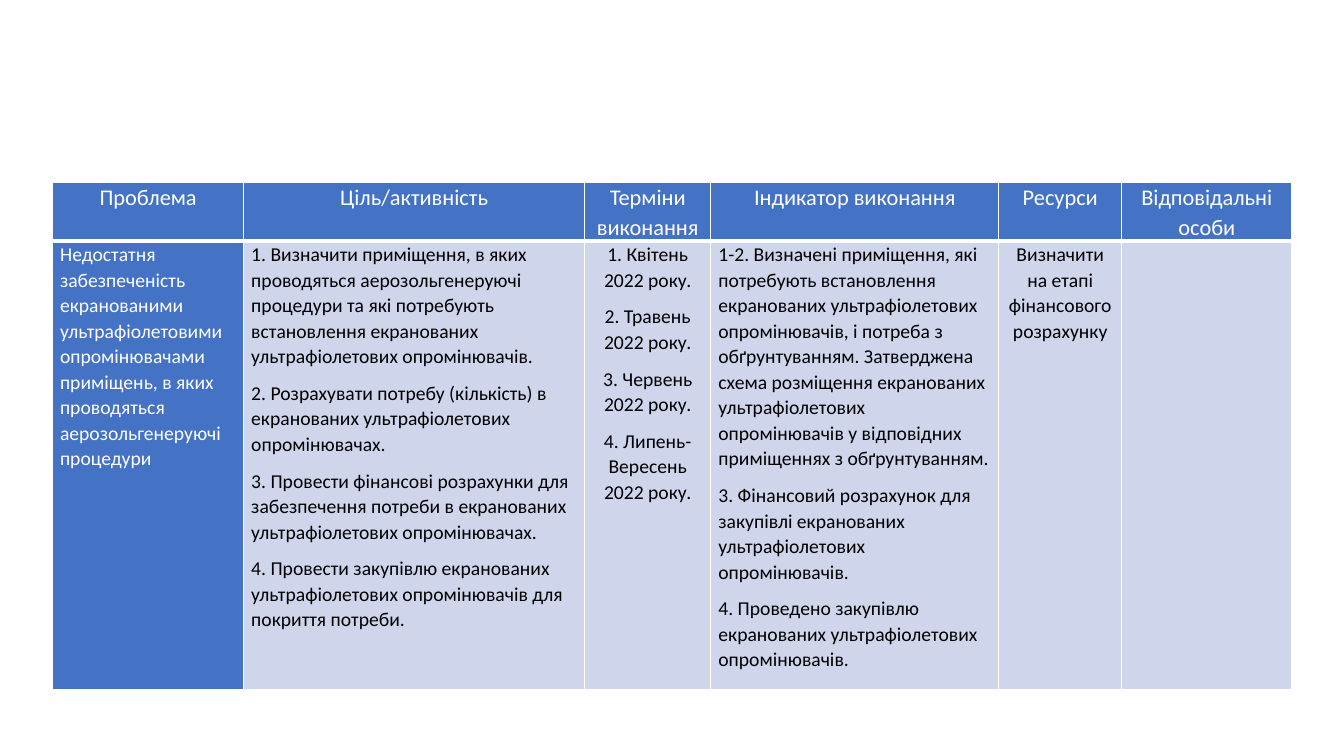
from dataclasses import dataclass

from lxml.etree import SubElement
from pptx import Presentation
from pptx.dml.color import RGBColor
from pptx.enum.text import PP_ALIGN
from pptx.oxml.ns import qn
from pptx.table import Table, _Cell
from pptx.util import Pt


@dataclass(frozen=True)
class Theme:
    font: str = "Calibri"
    head: int = 16
    body: int = 14
    blue: str = "4472C4"
    pale: str = "CFD5EA"
    white: str = "FFFFFF"
    black: str = "000000"
    thin: int = 1
    thick: int = 3


@dataclass(frozen=True)
class Column:
    title: str
    width: float
    items: tuple[str, ...] = ()
    center: bool = False
    lead: bool = False


THEME = Theme()
COLUMNS = (
    Column("Проблема", 136.6, (
        "Недостатня забезпеченість екранованими ультрафіолетовими опромінювачами "
        "приміщень, в яких проводяться аерозольгенеруючі процедури",
    ), lead=True),
    Column("Ціль/активність", 243.5, (
        "1. Визначити приміщення, в яких проводяться аерозольгенеруючі процедури "
        "та які потребують встановлення екранованих ультрафіолетових опромінювачів.",
        "2. Розрахувати потребу (кількість) в екранованих ультрафіолетових опромінювачах.",
        "3. Провести фінансові розрахунки для забезпечення потреби в екранованих "
        "ультрафіолетових опромінювачах.",
        "4. Провести закупівлю екранованих ультрафіолетових опромінювачів для "
        "покриття потреби.",
    )),
    Column("Терміни виконання", 90.2, (
        "1. Квітень 2022 року.",
        "2. Травень 2022 року.",
        "3. Червень 2022 року.",
        "4. Липень-Вересень 2022 року.",
    ), center=True),
    Column("Індикатор виконання", 205.7, (
        "1-2. Визначені приміщення, які потребують встановлення екранованих "
        "ультрафіолетових опромінювачів, і потреба з обґрунтуванням. Затверджена "
        "схема розміщення екранованих ультрафіолетових опромінювачів у відповідних "
        "приміщеннях з обґрунтуванням.",
        "3. Фінансовий розрахунок для закупівлі екранованих ультрафіолетових "
        "опромінювачів.",
        "4. Проведено закупівлю екранованих ультрафіолетових опромінювачів.",
    )),
    Column("Ресурси", 87.8, ("Визначити на етапі фінансового розрахунку",), center=True),
    Column("Відповідальні особи", 121.6),
)
HEIGHTS = (38.9, 320.4)


def write(cell: _Cell, items: tuple[str, ...], *, size: int, color: str,
          center: bool) -> None:
    frame = cell.text_frame
    for i, item in enumerate(items):
        para = frame.add_paragraph() if i else frame.paragraphs[0]
        para.alignment = PP_ALIGN.CENTER if center else PP_ALIGN.LEFT
        para.line_spacing = 1.07
        para.space_after = Pt(8)
        run = para.add_run()
        run.text = item
        run.font.name = THEME.font
        run.font.size = Pt(size)
        run.font.bold = False
        run.font.color.rgb = RGBColor.from_string(color)


def border(cell: _Cell, base: int) -> None:
    """Draw white lines on all four sides, with the given bottom width."""
    props = cell._tc.get_or_add_tcPr()
    for side in "LRTB":
        width = base if side == "B" else THEME.thin
        line = SubElement(props, qn(f"a:ln{side}"), w=str(Pt(width)))
        fill = SubElement(line, qn("a:solidFill"))
        SubElement(fill, qn("a:srgbClr"), val=THEME.white)


def style(cell: _Cell, fill: str, base: int) -> None:
    cell.margin_left = cell.margin_right = Pt(5.4)
    cell.margin_top = cell.margin_bottom = Pt(0)
    border(cell, base)
    cell.fill.solid()
    cell.fill.fore_color.rgb = RGBColor.from_string(fill)


def draw(table: Table, index: int, col: Column) -> None:
    """Fill one column: its heading and its body cell."""
    table.columns[index].width = Pt(col.width)
    head, body = table.cell(0, index), table.cell(1, index)
    style(head, THEME.blue, THEME.thick)
    write(head, (col.title,), size=THEME.head, color=THEME.white, center=True)
    style(body, THEME.blue if col.lead else THEME.pale, THEME.thin)
    write(body, col.items, size=THEME.body, center=col.center,
          color=THEME.white if col.lead else THEME.black)


def main() -> None:
    deck = Presentation()
    deck.slide_width, deck.slide_height = Pt(960), Pt(540)
    slide = deck.slides.add_slide(deck.slide_layouts[6])
    width = sum(col.width for col in COLUMNS)
    table = slide.shapes.add_table(
        len(HEIGHTS), len(COLUMNS), Pt(37.5), Pt(130.5), Pt(width), Pt(sum(HEIGHTS))
    ).table
    for row, height in zip(table.rows, HEIGHTS):
        row.height = Pt(height)
    for index, col in enumerate(COLUMNS):
        draw(table, index, col)
    deck.save("out.pptx")


if __name__ == "__main__":
    main()
